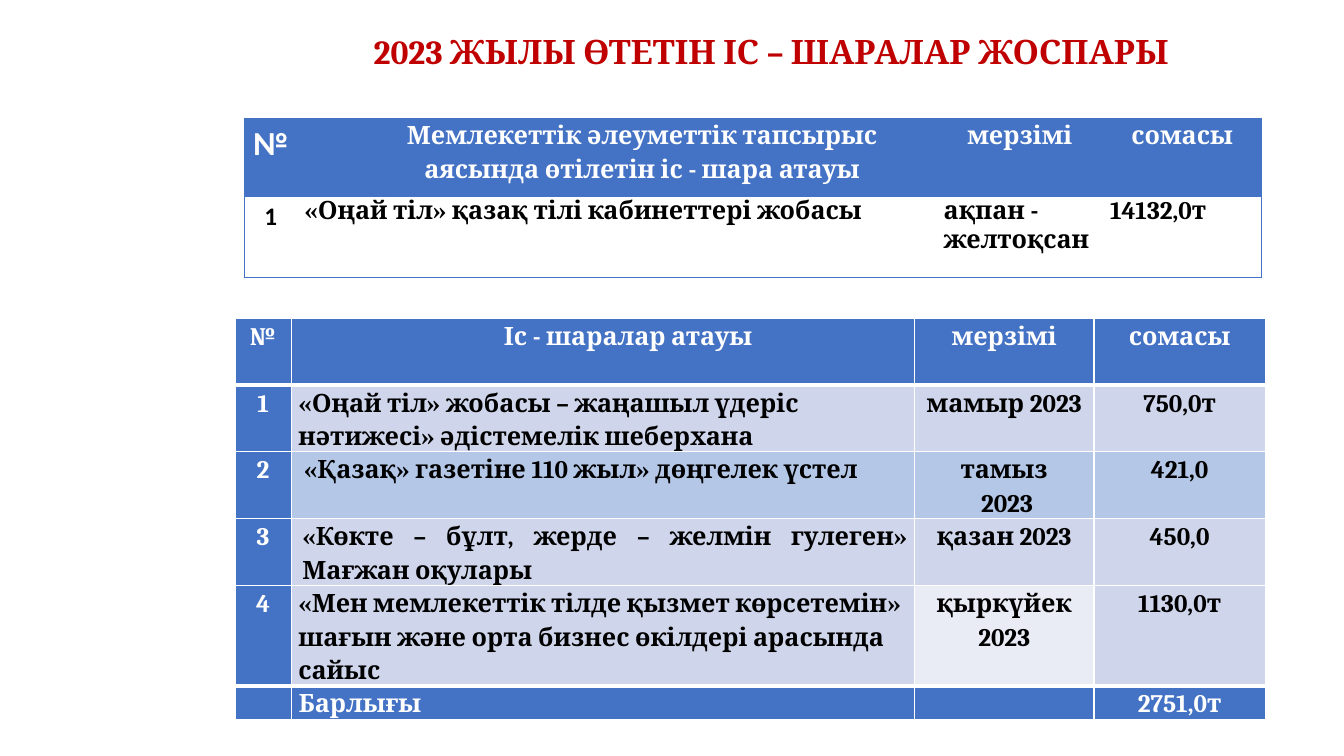
from lxml import etree
from pptx import Presentation
from pptx.dml.color import RGBColor
from pptx.enum.text import MSO_ANCHOR, PP_ALIGN
from pptx.oxml.ns import qn
from pptx.util import Inches, Pt

CENTER, LEFT, JUSTIFY = PP_ALIGN.CENTER, PP_ALIGN.LEFT, PP_ALIGN.JUSTIFY
MIDDLE = MSO_ANCHOR.MIDDLE

WHITE = RGBColor(0xFF, 0xFF, 0xFF)
BLACK = RGBColor(0x00, 0x00, 0x00)
RED = RGBColor(0xC0, 0x00, 0x00)
BLUE = RGBColor(0x44, 0x72, 0xC4)
BAND = RGBColor(0xCF, 0xD5, 0xEA)
LIGHT_BLUE = RGBColor(0xB4, 0xC7, 0xE7)
PALE = RGBColor(0xE9, 0xEB, 0xF5)

TITLE = "2023 ЖЫЛЫ ӨТЕТІН ІС – ШАРАЛАР ЖОСПАРЫ"
STATE_ORDER = [
    ["№", "Мемлекеттік әлеуметтік тапсырыс аясында өтілетін іс - шара атауы",
     "мерзімі", "сомасы"],
    ["1", "«Оңай тіл» қазақ тілі кабинеттері жобасы", "ақпан - желтоқсан", "14132,0т"],
]
EVENTS = [
    ["№", "Іс - шаралар атауы", "мерзімі", "сомасы"],
    ["1", "«Оңай тіл» жобасы – жаңашыл үдеріс нәтижесі» әдістемелік шеберхана",
     "мамыр 2023", "750,0т"],
    ["2", " «Қазақ» газетіне 110 жыл» дөңгелек үстел", "тамыз\n 2023", "421,0"],
    ["3", "«Көкте – бұлт, жерде – желмін гулеген» Мағжан оқулары", "қазан 2023", "450,0"],
    ["4", "«Мен мемлекеттік тілде қызмет көрсетемін» шағын және орта бизнес "
          "өкілдері арасында сайыс", "қыркүйек 2023", "1130,0т"],
    ["", "Барлығы", "", "2751,0т"],
]


def format_paragraph(paragraph, color, size=18, face="Cambria", align=CENTER,
                     spacing=1.15, indent=0):
    if indent:
        paragraph._p.get_or_add_pPr().set("marL", str(Inches(indent)))
    paragraph.alignment = align
    paragraph.line_spacing = spacing
    for run in paragraph.runs:
        for name, value in {"name": face, "size": Pt(size), "bold": True}.items():
            setattr(run.font, name, value)
        run.font.color.rgb = color


def set_borders(cell, borders):
    """Draw the given sides (colour, points) and clear the others."""
    properties = cell._tc.get_or_add_tcPr()
    for side in "LRTB":
        line = etree.SubElement(properties, qn(f"a:ln{side}"))
        if side in borders:
            color, width = borders[side]
            line.set("w", str(Pt(width)))
            fill = etree.SubElement(line, qn("a:solidFill"))
            etree.SubElement(fill, qn("a:srgbClr"), val=str(color))
        else:
            etree.SubElement(line, qn("a:noFill"))


def fill_cell(cell, text, color, fill, borders, **formats):
    margins = {"margin_left": 0.07, "margin_right": 0.07,
               "margin_top": 0, "margin_bottom": 0}
    for name, value in margins.items():
        setattr(cell, name, Inches(value))
    set_borders(cell, borders)
    cell.fill.solid()
    cell.fill.fore_color.rgb = fill
    cell.text = text
    for paragraph in cell.text_frame.paragraphs:
        format_paragraph(paragraph, color, **formats)


def add_grid(slide, left, top, widths, heights):
    table = slide.shapes.add_table(
        len(heights), len(widths), Inches(left), Inches(top),
        Inches(sum(widths)), Inches(sum(heights))).table
    table.first_row = table.horz_banding = False
    for column, width in zip(table.columns, widths):
        column.width = Inches(width)
    for row, height in zip(table.rows, heights):
        row.height = Inches(height)
    return table


def add_title(slide):
    title = slide.shapes.title
    place = {"left": 1.97, "top": 0, "width": 11.36, "height": 1.06}
    for name, value in place.items():
        setattr(title, name, Inches(value))
    title.text_frame.text = TITLE
    title.text_frame.vertical_anchor = MIDDLE
    format_paragraph(title.text_frame.paragraphs[0], RED, size=24, spacing=0.9)


def add_events(slide):
    table = add_grid(slide, 2.33, 3.16, [0.56, 6.18, 1.78, 1.7],
                     [0.66, 0.66, 0.66, 0.66, 0.99, 0.33])
    row_fills = [BLUE, BAND, LIGHT_BLUE, BAND, BAND, BLUE]
    name_formats = {0: {"indent": 0.5}, 3: {"align": JUSTIFY, "indent": 0.04}}
    last = len(EVENTS) - 1
    for r, row in enumerate(EVENTS):
        borders = {side: (WHITE, 1) for side in "LRTB"}
        # Thick rules below the header and above the total
        if r in (0, last - 1):
            borders["B"] = (WHITE, 3)
        if r in (1, last):
            borders["T"] = (WHITE, 3)
        for c, text in enumerate(row):
            fill = BLUE if c == 0 else PALE if (r, c) == (4, 2) else row_fills[r]
            formats = name_formats.get(r, {"align": LEFT}) if c == 1 else {}
            color = WHITE if fill == BLUE else BLACK
            fill_cell(table.cell(r, c), text, color, fill, borders, **formats)


def add_state_order(slide):
    widths = [0.53, 6.34, 1.65, 1.57]
    table = add_grid(slide, 2.42, 1.17, widths, [0.78, 0.8])
    header_formats = {0: {"size": 24, "face": "Calibri"}, 1: {"indent": 0.5}}
    for r, row in enumerate(STATE_ORDER):
        for c, text in enumerate(row):
            # Frame around the whole table only
            sides = "T" if r == 0 else "B"
            sides += {0: "L", len(widths) - 1: "R"}.get(c, "")
            borders = {side: (BLUE, 0.5) for side in sides}
            if r == 0:
                fill_cell(table.cell(r, c), text, WHITE, BLUE, borders,
                          **header_formats.get(c, {}))
            else:
                formats = {"align": LEFT, "spacing": 1.0} if c else {"face": "Calibri"}
                fill_cell(table.cell(r, c), text, BLACK, WHITE, borders, **formats)


def main():
    deck = Presentation()
    deck.slide_width, deck.slide_height = Inches(13.33), Inches(7.5)
    slide = deck.slides.add_slide(deck.slide_layouts[5])
    add_title(slide)
    add_events(slide)
    add_state_order(slide)
    deck.save("out.pptx")


if __name__ == "__main__":
    main()
